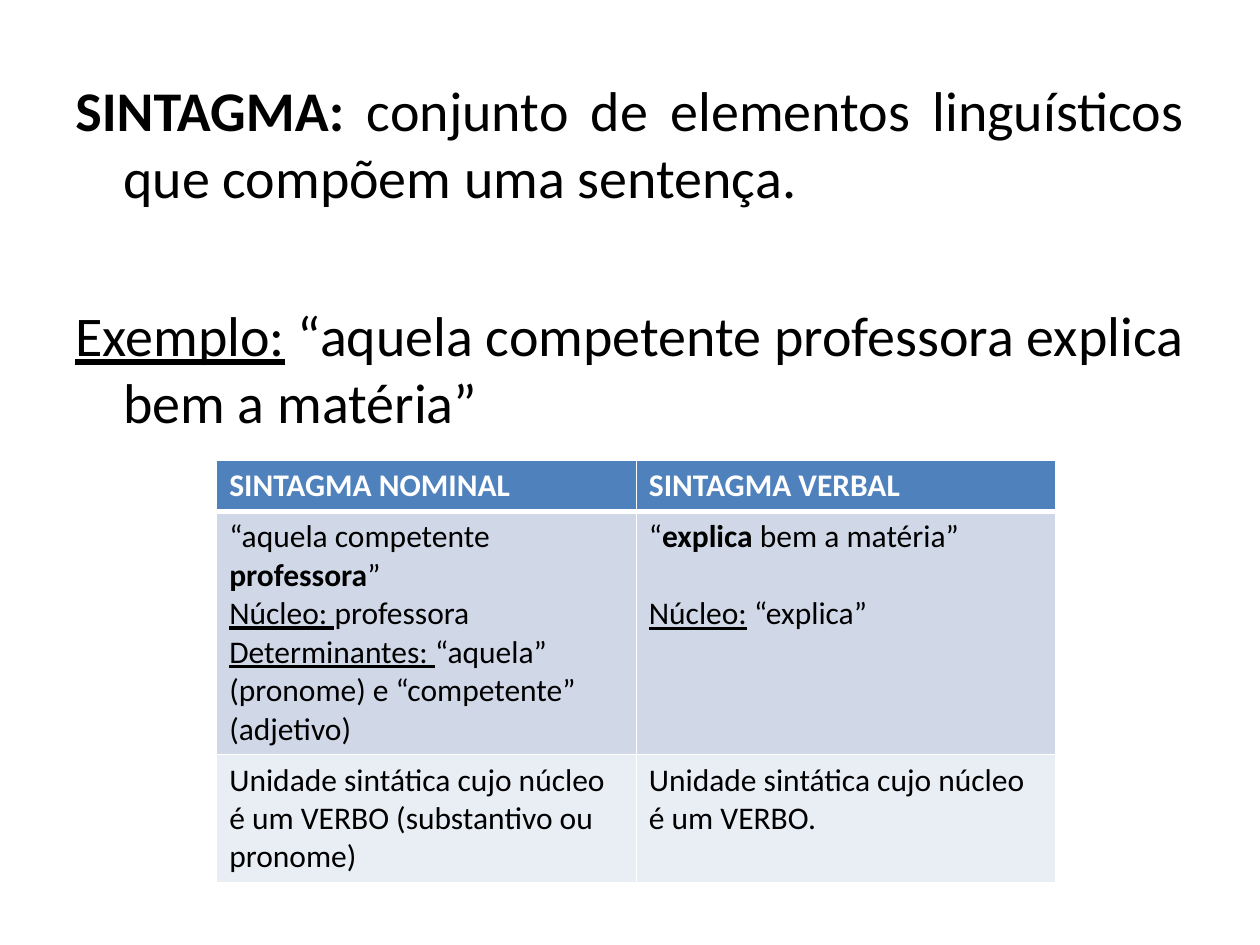
from lxml import etree
from pptx import Presentation
from pptx.dml.color import RGBColor
from pptx.enum.text import PP_ALIGN
from pptx.oxml.ns import qn
from pptx.util import Inches, Pt

JUSTIFY = PP_ALIGN.JUSTIFY
FONT = "Calibri"
COLORS = {
    "text": "000000",
    "white": "FFFFFF",
    "header": "4F81BD",
    "dark_band": "D0D8E8",
    "light_band": "E9EDF4",
}


def add_runs(paragraph, runs, size, color):
    """Each run is (text, style); style holds "b" for bold, "u" for underline."""
    for text, style in runs:
        run = paragraph.add_run()
        run.text = text
        run.font.name = FONT
        run.font.size = Pt(size)
        run.font.bold = "b" in style
        run.font.underline = "u" in style
        run.font.color.rgb = RGBColor.from_string(COLORS[color])


def set_borders(cell, widths):
    properties = cell._tc.get_or_add_tcPr()
    for index, (side, width) in enumerate(widths.items()):
        line = etree.Element(qn("a:ln" + side), w=str(Pt(width)))
        fill = etree.SubElement(line, qn("a:solidFill"))
        etree.SubElement(fill, qn("a:srgbClr"), val=COLORS["white"])
        properties.insert(index, line)


presentation = Presentation()
presentation.slide_width = Inches(10)
presentation.slide_height = Inches(7.5)
slide = presentation.slides.add_slide(presentation.slide_layouts[6])

# Definition and example, with hanging indents
definition = [
    (6.4, [("SINTAGMA: ", "b"),
           ("conjunto de elementos linguísticos que compõem uma sentença.", "")]),
    (51.8, [("Exemplo:", "u"),
            (" “aquela competente professora explica bem a matéria”", "")]),
]
text_box = slide.shapes.add_textbox(Inches(0.5), Inches(0.55), Inches(9), Inches(4.98))
text_frame = text_box.text_frame
text_frame.word_wrap = True
for index, (space, runs) in enumerate(definition):
    paragraph = text_frame.paragraphs[0] if index == 0 else text_frame.add_paragraph()
    paragraph.alignment = JUSTIFY
    paragraph.space_before = Pt(space)
    indent = paragraph._p.get_or_add_pPr()
    indent.set("marL", str(Inches(0.38)))
    indent.set("indent", str(-Inches(0.38)))
    add_runs(paragraph, runs, 32, "text")

# Table content: cells hold paragraphs of (space before, runs)
rows = [
    [[(0, [("SINTAGMA NOMINAL", "b")])],
     [(0, [("SINTAGMA VERBAL", "b")])]],
    [[(0, [("“aquela competente ", ""), ("professora", "b"), ("”", "")]),
      (0, [("Núcleo: ", "u"), ("professora", "")]),
      (0, [("Determinantes: ", "u"),
           ("“aquela” (pronome) e “competente” (adjetivo)", "")])],
     [(0, [("“", ""), ("explica", "b"), (" bem a matéria”", "")]),
      (22, [("Núcleo:", "u"), (" “explica”", "")])]],
    [[(0, [("Unidade sintática cujo núcleo é um VERBO (substantivo ou pronome)", "")])],
     [(0, [("Unidade sintática cujo núcleo é um VERBO.", "")])]],
]
row_styles = [
    (0.41, "header", "white"),
    (1.93, "dark_band", "text"),
    (1.02, "light_band", "text"),
]

# Comparison table
table = slide.shapes.add_table(
    len(rows), 2, Inches(1.72), Inches(3.65), Inches(6.67), Inches(3.36)).table
for column in table.columns:
    column.width = Inches(3.33)
for row_index, (height, fill, color) in enumerate(row_styles):
    table.rows[row_index].height = Inches(height)
    for column_index, paragraphs in enumerate(rows[row_index]):
        cell = table.cell(row_index, column_index)
        cell.fill.solid()
        cell.fill.fore_color.rgb = RGBColor.from_string(COLORS[fill])
        set_borders(cell, {"L": 1, "R": 1,
                           "T": 3 if row_index == 1 else 1,
                           "B": 3 if row_index == 0 else 1})
        for index, (space, runs) in enumerate(paragraphs):
            frame = cell.text_frame
            paragraph = frame.paragraphs[0] if index == 0 else frame.add_paragraph()
            paragraph.space_before = Pt(space)
            add_runs(paragraph, runs, 18, color)

presentation.save("out.pptx")
